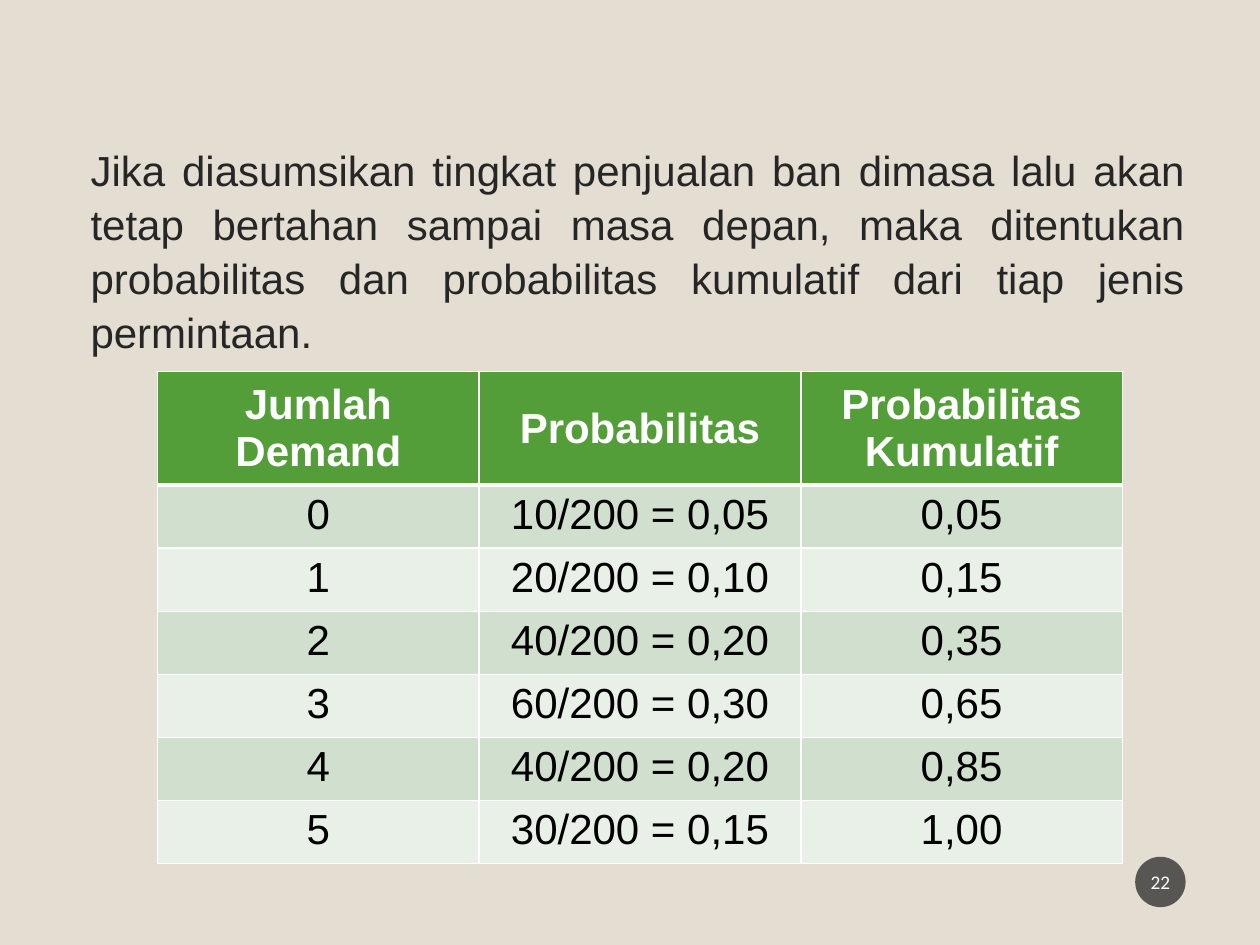
"""Build a slide showing the probability table of tyre demand."""
from typing import NamedTuple

from lxml.etree import SubElement
from pptx import Presentation
from pptx.dml.color import RGBColor
from pptx.enum.shapes import MSO_SHAPE
from pptx.enum.text import MSO_ANCHOR, PP_ALIGN
from pptx.oxml.ns import qn
from pptx.util import Pt


class Box(NamedTuple):
    left: float
    top: float
    width: float
    height: float


class Style(NamedTuple):
    color: str
    size: float = 24
    font: str = "Arial"
    bold: bool = False
    align: PP_ALIGN = PP_ALIGN.CENTER


class Demand(NamedTuple):
    amount: str
    probability: str
    cumulative: str


INTRO = (
    "Jika diasumsikan tingkat penjualan ban dimasa lalu akan tetap bertahan "
    "sampai masa depan, maka ditentukan probabilitas dan probabilitas kumulatif "
    "dari tiap jenis permintaan."
)
ROWS = [
    Demand("Jumlah Demand", "Probabilitas", "Probabilitas Kumulatif"),
    Demand("0", "10/200 = 0,05", "0,05"),
    Demand("1", "20/200 = 0,10", "0,15"),
    Demand("2", "40/200 = 0,20", "0,35"),
    Demand("3", "60/200 = 0,30", "0,65"),
    Demand("4", "40/200 = 0,20", "0,85"),
    Demand("5", "30/200 = 0,15", "1,00"),
]
HEADER_HEIGHT, ROW_HEIGHT = 60, 34
HEADER_FILL, BANDS = "549E39", ("E9F0E8", "D1DFCE")
HEADER_STYLE = Style("FFFFFF", bold=True)
CELL_STYLE = Style("000000")


def rgb(value: str) -> RGBColor:
    return RGBColor.from_string(value)


def paint(fill, color: str) -> None:
    fill.solid()
    fill.fore_color.rgb = rgb(color)


def put_text(tf, text: str, style: Style, **paragraph_format):
    tf.word_wrap = True
    p = tf.paragraphs[0]
    for name, value in {"alignment": style.align, **paragraph_format}.items():
        setattr(p, name, value)
    r = p.add_run()
    r.text = text
    values = {"name": style.font, "size": Pt(style.size), "bold": style.bold}
    for name, value in values.items():
        setattr(r.font, name, value)
    r.font.color.rgb = rgb(style.color)


def set_borders(cell, bottom: float) -> None:
    tc_pr = cell._tc.get_or_add_tcPr()
    for side, width in {"L": 1, "R": 1, "T": 1, "B": bottom}.items():
        ln = SubElement(tc_pr, qn(f"a:ln{side}"), w=str(Pt(width)))
        SubElement(SubElement(ln, qn("a:solidFill")), qn("a:srgbClr"), val="FFFFFF")


def add_intro(s, box: Box) -> None:
    sp = s.shapes.add_textbox(*map(Pt, box))
    style = Style("262626", align=PP_ALIGN.JUSTIFY)
    put_text(sp.text_frame, INTRO, style, space_before=Pt(10), line_spacing=1.07)


def add_demand_table(s, box: Box) -> None:
    table = s.shapes.add_table(len(ROWS), len(Demand._fields), *map(Pt, box)).table
    for column in table.columns:
        column.width = Pt(box.width / len(Demand._fields))
    for i, row in enumerate(ROWS):
        header = i == 0
        table.rows[i].height = Pt(HEADER_HEIGHT if header else ROW_HEIGHT)
        for j, text in enumerate(row):
            cell = table.cell(i, j)
            cell.vertical_anchor = MSO_ANCHOR.MIDDLE if header else MSO_ANCHOR.TOP
            put_text(cell.text_frame, text, HEADER_STYLE if header else CELL_STYLE)
            set_borders(cell, bottom=3 if header else 1)
            paint(cell.fill, HEADER_FILL if header else BANDS[i % 2])


def add_page_number(s, box: Box, number: str) -> None:
    sp = s.shapes.add_shape(MSO_SHAPE.OVAL, *map(Pt, box))
    sp.shadow.inherit = False
    sp.line.fill.background()
    paint(sp.fill, "1D1D1D")
    color = sp._element.spPr.find(qn("a:solidFill")).find(qn("a:srgbClr"))
    SubElement(color, qn("a:alpha"), val="70000")
    tf = sp.text_frame
    tf.vertical_anchor = MSO_ANCHOR.MIDDLE
    tf.margin_left = tf.margin_right = Pt(1.44)
    put_text(tf, number, Style("FFFFFF", 11, "Calibri"))


def main() -> None:
    prs = Presentation()
    prs.slide_width, prs.slide_height = Pt(720), Pt(540)
    s = prs.slides.add_slide(prs.slide_layouts[6])
    paint(s.background.fill, "E3DED1")
    add_intro(s, Box(44.64, 77, 639.36, 124))
    add_page_number(s, Box(648.7, 489.6, 28.8, 28.8), "22")
    table_height = HEADER_HEIGHT + ROW_HEIGHT * (len(ROWS) - 1)
    add_demand_table(s, Box(90, 212.4, 551.4, table_height))
    prs.save("out.pptx")


if __name__ == "__main__":
    main()
